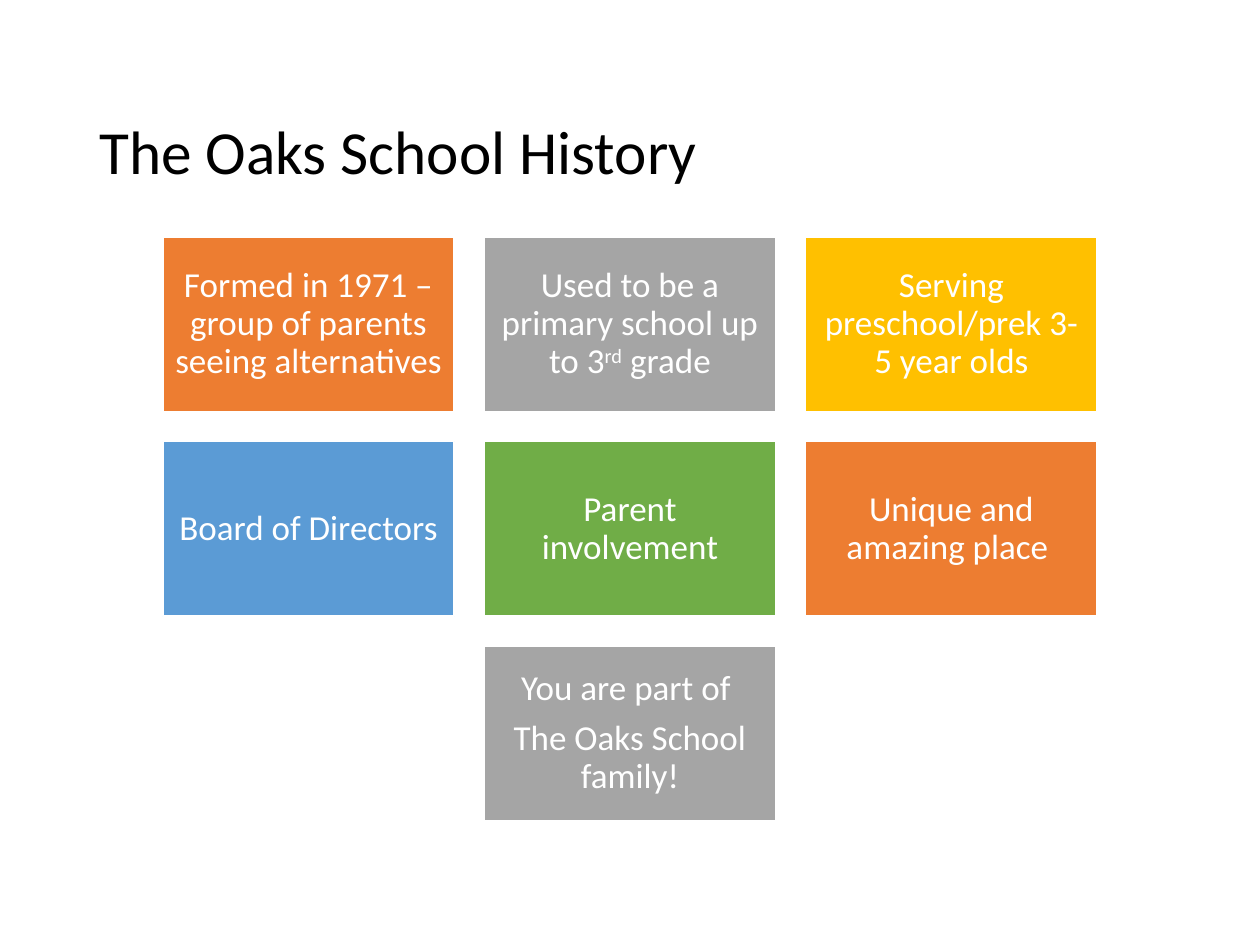
from dataclasses import dataclass

from pptx import Presentation
from pptx.dml.color import RGBColor
from pptx.enum.shapes import MSO_SHAPE
from pptx.enum.text import MSO_ANCHOR, MSO_AUTO_SIZE, PP_ALIGN
from pptx.shapes.autoshape import Shape
from pptx.shapes.shapetree import GroupShapes, SlideShapes
from pptx.slide import Slide
from pptx.text.text import _Paragraph, _Run
from pptx.util import Cm, Pt

RECTANGLE = MSO_SHAPE.RECTANGLE
CENTER, LEFT = PP_ALIGN.CENTER, PP_ALIGN.LEFT
MIDDLE, BOTTOM = MSO_ANCHOR.MIDDLE, MSO_ANCHOR.BOTTOM
NO_AUTOFIT = MSO_AUTO_SIZE.NONE
TITLE_ONLY = 5


@dataclass(frozen=True)
class Theme:
    font: str = "Calibri"
    title_size: int = 35
    tile_size: int = 20
    line_spacing: float = 0.9
    paragraph_gap: int = 7
    black: str = "000000"
    white: str = "FFFFFF"
    orange: str = "ED7D31"
    gray: str = "A5A5A5"
    gold: str = "FFC000"
    blue: str = "5B9BD5"
    green: str = "70AD47"


@dataclass(frozen=True)
class Box:
    """A rectangle in centimetres."""
    left: float
    top: float
    width: float
    height: float


@dataclass(frozen=True)
class Tile:
    """A coloured tile; text between carets is raised."""
    color: str
    paragraphs: tuple[str, ...]


THEME = Theme()
PAGE = Box(0, 0, 25.4, 19.05)
PANEL = Box(0.99, 1.35, 23.42, 16.38)
TITLE = Box(1.75, 1.07, 14.99, 2.84)
FIRST_TILE = Box(3.28, 4.78, 5.88, 3.52)
GAP = 0.6
COLUMNS = 3
INSET = 0.21
SCHOOL = "The Oaks School"

TILES = [
    Tile(THEME.orange, ("Formed in 1971 – group of parents seeing alternatives",)),
    Tile(THEME.gray, ("Used to be a primary school up to 3^rd^ grade",)),
    Tile(THEME.gold, ("Serving preschool/prek 3-5 year olds",)),
    Tile(THEME.blue, ("Board of Directors",)),
    Tile(THEME.green, ("Parent involvement",)),
    Tile(THEME.orange, ("Unique and amazing place ",)),
    Tile(THEME.gray, ("You are part of ", f"{SCHOOL} family!")),
]


def color(value: str) -> RGBColor:
    return RGBColor.from_string(value)


def add_rectangle(shapes: SlideShapes | GroupShapes, box: Box, fill: str) -> Shape:
    rectangle = shapes.add_shape(
        RECTANGLE, Cm(box.left), Cm(box.top), Cm(box.width), Cm(box.height))
    rectangle.shadow.inherit = False
    rectangle.fill.solid()
    rectangle.fill.fore_color.rgb = color(fill)
    rectangle.line.fill.background()
    return rectangle


def format_run(span: _Run, size: int, ink: str) -> None:
    span.font.name = THEME.font
    span.font.size = Pt(size)
    span.font.color.rgb = color(ink)


def fill_paragraph(para: _Paragraph, text: str) -> None:
    """Write tile text, raising every part that stands between carets."""
    para.alignment = CENTER
    para.line_spacing = THEME.line_spacing
    para.space_after = Pt(THEME.paragraph_gap)
    for index, part in enumerate(text.split("^")):
        span = para.add_run()
        span.text = part
        format_run(span, THEME.tile_size, THEME.white)
        if index % 2:
            span.font._element.set("baseline", "30000")


def add_tile(shapes: GroupShapes, box: Box, tile: Tile) -> None:
    rectangle = add_rectangle(shapes, box, tile.color)
    rectangle.line.color.rgb = color(THEME.white)
    rectangle.line.width = Pt(1)
    frame = rectangle.text_frame
    frame.word_wrap = True
    frame.vertical_anchor = MIDDLE
    frame.margin_left = frame.margin_right = Cm(INSET)
    frame.margin_top = frame.margin_bottom = Cm(INSET)
    for index, text in enumerate(tile.paragraphs):
        para = frame.add_paragraph() if index else frame.paragraphs[0]
        fill_paragraph(para, text)


def add_tile_grid(page: Slide) -> None:
    """Lay the tiles out in rows, with a short last row centred."""
    group = page.shapes.add_group_shape()
    across, down = FIRST_TILE.width + GAP, FIRST_TILE.height + GAP
    for start in range(0, len(TILES), COLUMNS):
        row = TILES[start:start + COLUMNS]
        indent = (COLUMNS - len(row)) / 2
        top = FIRST_TILE.top + start // COLUMNS * down
        for column, tile in enumerate(row):
            left = FIRST_TILE.left + (column + indent) * across
            box = Box(left, top, FIRST_TILE.width, FIRST_TILE.height)
            add_tile(group.shapes, box, tile)


def place_title(page: Slide) -> None:
    """Fill the title placeholder and bring it in front of the panels."""
    title = page.shapes.title
    title.left, title.top = Cm(TITLE.left), Cm(TITLE.top)
    title.width, title.height = Cm(TITLE.width), Cm(TITLE.height)
    frame = title.text_frame
    frame.text = f"{SCHOOL} History"
    frame.word_wrap = True
    frame.auto_size = NO_AUTOFIT
    frame.vertical_anchor = BOTTOM
    para = frame.paragraphs[0]
    para.alignment = LEFT
    para.line_spacing = THEME.line_spacing
    format_run(para.runs[0], THEME.title_size, THEME.black)
    title.element.getparent().append(title.element)


def main() -> None:
    deck = Presentation()
    deck.slide_width, deck.slide_height = Cm(PAGE.width), Cm(PAGE.height)
    page = deck.slides.add_slide(deck.slide_layouts[TITLE_ONLY])
    page.background.fill.solid()
    page.background.fill.fore_color.rgb = color(THEME.black)
    for panel in (PAGE, PANEL):
        add_rectangle(page.shapes, panel, THEME.white)
    place_title(page)
    add_tile_grid(page)
    deck.save("out.pptx")


if __name__ == "__main__":
    main()
